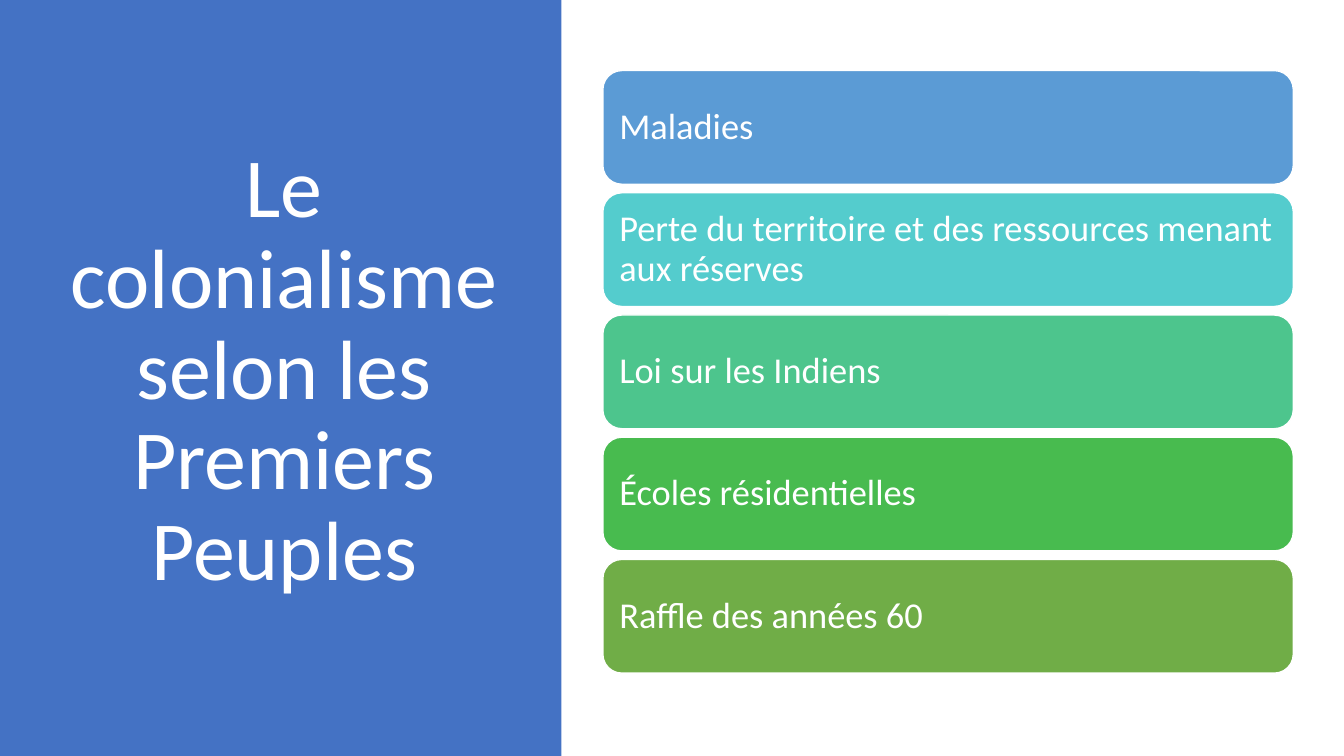
from dataclasses import dataclass

from pptx import Presentation
from pptx.dml.color import RGBColor
from pptx.enum.shapes import MSO_SHAPE
from pptx.enum.text import MSO_ANCHOR, PP_ALIGN
from pptx.util import Pt

WHITE = "FFFFFF"
CARD_TOP, CARD_PITCH = 50.4, 87.3


@dataclass
class Box:
    left: float
    top: float
    width: float
    height: float


@dataclass
class Card:
    text: str
    fill: str


CARDS = [
    Card("Maladies", "5B9BD5"),
    Card("Perte du territoire et des ressources menant aux réserves", "54CCCD"),
    Card("Loi sur les Indiens", "4DC58D"),
    Card("Écoles résidentielles", "48BB4F"),
    Card("Raffle des années 60", "70AD47"),
]


def color(code: str) -> RGBColor:
    return RGBColor.from_string(code)


def add_block(page, kind, box: Box, fill: str):
    block = page.shapes.add_shape(
        kind, Pt(box.left), Pt(box.top), Pt(box.width), Pt(box.height))
    block.shadow.inherit = False
    block.fill.solid()
    block.fill.fore_color.rgb = color(fill)
    block.line.fill.background()
    return block


def write_text(frame, text: str, size: float, align, inset: float) -> None:
    frame_format = {"word_wrap": True, "vertical_anchor": MSO_ANCHOR.MIDDLE}
    for side in ("left", "top", "right", "bottom"):
        frame_format[f"margin_{side}"] = Pt(inset)
    for name, value in frame_format.items():
        setattr(frame, name, value)

    para = frame.paragraphs[0]
    para.alignment = align
    para.line_spacing = 0.9
    span = para.add_run()
    span.text = text
    for name, value in {"name": "Calibri", "size": Pt(size)}.items():
        setattr(span.font, name, value)
    span.font.color.rgb = color(WHITE)


def add_card(page, card: Card, top: float) -> None:
    block = add_block(page, MSO_SHAPE.ROUNDED_RECTANGLE,
                      Box(430.6, top, 493.2, 81.2), card.fill)
    block.line.color.rgb = color(WHITE)
    block.line.width = Pt(1)
    write_text(block.text_frame, card.text, 26, PP_ALIGN.LEFT, 7.8)


def main() -> None:
    deck = Presentation()
    deck.slide_width, deck.slide_height = Pt(960), Pt(540)
    page = deck.slides.add_slide(deck.slide_layouts[6])

    # Title panel
    add_block(page, MSO_SHAPE.RECTANGLE, Box(0, 0, 401, 540), "4472C4")
    title = page.shapes.add_textbox(Pt(41), Pt(49), Pt(324), Pt(433.4))
    write_text(title.text_frame, "Le colonialisme selon les Premiers Peuples",
               60, PP_ALIGN.CENTER, 7.2)

    # Stack of cards
    for index, card in enumerate(CARDS):
        add_card(page, card, CARD_TOP + index * CARD_PITCH)

    deck.save("out.pptx")


if __name__ == "__main__":
    main()
